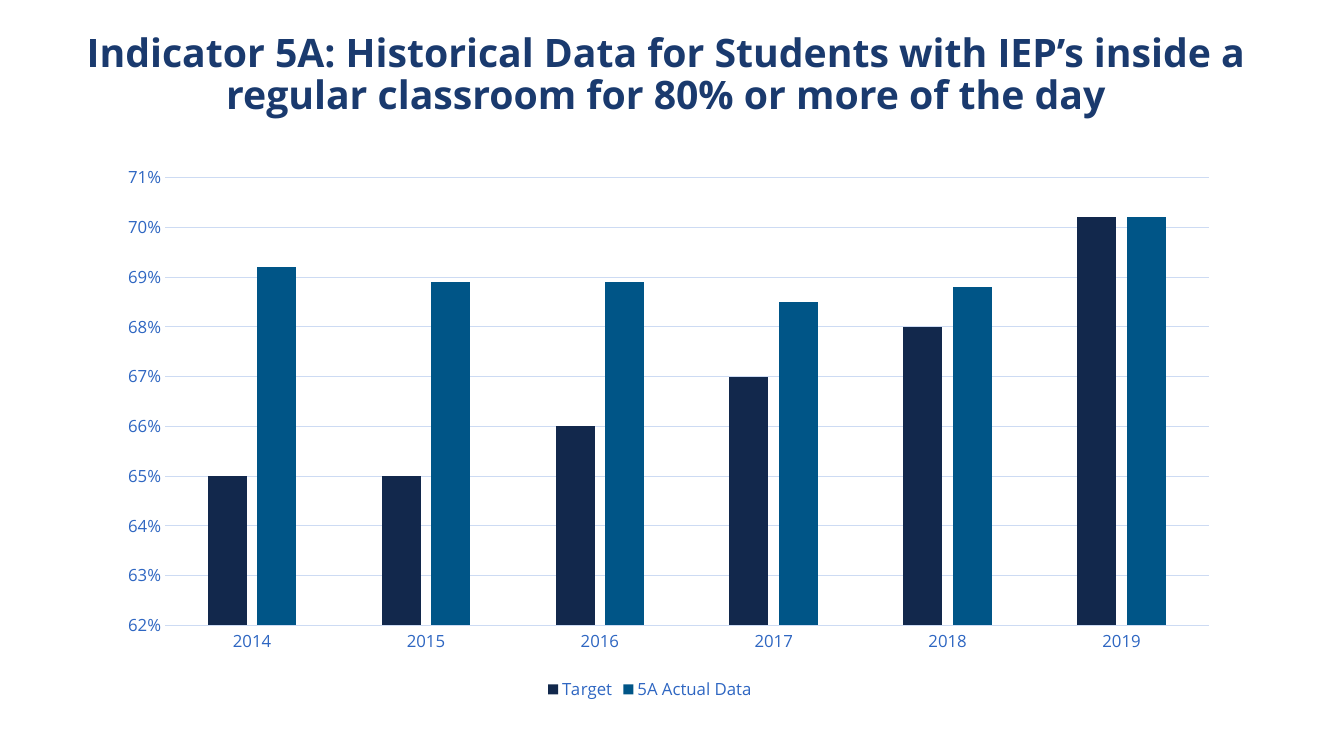
"""Build a slide comparing yearly targets with actual classroom data."""
from dataclasses import dataclass
from typing import Any

import pptx
import pptx.chart.data
import pptx.dml.color
import pptx.enum.chart
import pptx.enum.text
import pptx.oxml
import pptx.oxml.ns
import pptx.util

Pt = pptx.util.Pt
RGB = pptx.dml.color.RGBColor
TITLE = RGB(0x1A, 0x3A, 0x6E)
NAVY = RGB(0x12, 0x28, 0x4C)
TEAL = RGB(0x00, 0x55, 0x87)
LABEL = RGB(0x2E, 0x66, 0xC2)
GRID = RGB(0xCD, 0xDB, 0xF3)
FACE = "Open Sans"
YEARS = [str(year) for year in range(2014, 2020)]
PLOT = {"x": 0.086, "y": 0.118, "w": 0.891, "h": 0.749}


@dataclass(frozen=True)
class Series:
    name: str
    rates: tuple[float, ...]
    color: RGB


SERIES = (
    Series("Target", (65, 65, 66, 67, 68, 70.2), NAVY),
    Series("5A Actual Data", (69.2, 68.9, 68.9, 68.5, 68.8, 70.2), TEAL),
)


def assign(item: Any, values: dict[str, Any]) -> None:
    for name, value in values.items():
        setattr(item, name, value)


def style(font: Any, size: float, color: RGB, bold: bool = False) -> None:
    assign(font, {"name": FACE, "size": Pt(size), "bold": bold})
    font.color.rgb = color


def rule(line: Any) -> None:
    line.width = Pt(0.75)
    line.color.rgb = GRID


def place(chart: Any) -> None:
    space = pptx.oxml.ns.nsdecls("c")
    modes = '<c:layoutTarget val="inner"/><c:xMode val="edge"/><c:yMode val="edge"/>'
    sizes = "".join(f'<c:{key} val="{value}"/>' for key, value in PLOT.items())
    layout = pptx.oxml.parse_xml(
        f"<c:layout {space}><c:manualLayout>{modes}{sizes}</c:manualLayout></c:layout>"
    )
    area = chart.element.find(".//" + pptx.oxml.ns.qn("c:plotArea"))
    for old in area.findall(pptx.oxml.ns.qn("c:layout")):
        area.remove(old)
    area.insert(0, layout)


def add_title(slide: Any) -> None:
    title = slide.shapes.title
    assign(title, {"left": Pt(13), "top": Pt(16.5), "width": Pt(925), "height": Pt(75)})
    frame = title.text_frame
    frame.text = (
        "Indicator 5A: Historical Data for Students with IEP’s inside a "
        "regular classroom for 80% or more of the day"
    )
    assign(frame, {
        "word_wrap": True,
        "auto_size": pptx.enum.text.MSO_AUTO_SIZE.SHAPE_TO_FIT_TEXT,
        "vertical_anchor": pptx.enum.text.MSO_ANCHOR.MIDDLE,
    })
    text = frame.paragraphs[0]
    assign(text, {"alignment": pptx.enum.text.PP_ALIGN.CENTER, "line_spacing": 0.9})
    style(text.runs[0].font, 28, TITLE, True)


def add_chart(slide: Any) -> None:
    data = pptx.chart.data.CategoryChartData(number_format="0%")
    data.categories = YEARS
    for item in SERIES:
        data.add_series(item.name, [round(rate / 100, 3) for rate in item.rates])
    chart = slide.shapes.add_chart(
        pptx.enum.chart.XL_CHART_TYPE.COLUMN_CLUSTERED,
        Pt(46), Pt(76.5), Pt(836.5), Pt(427), data,
    ).chart
    assign(chart, {"has_title": False, "has_legend": True})
    style(chart.font, 10, NAVY)
    place(chart)

    plot = chart.plots[0]
    assign(plot, {"gap_width": 219, "overlap": -27, "vary_by_categories": False})
    for item, bars in zip(SERIES, plot.series):
        bars.format.fill.solid()
        bars.format.fill.fore_color.rgb = item.color
        bars.invert_if_negative = False

    none = pptx.enum.chart.XL_TICK_MARK.NONE
    rates = chart.value_axis
    for axis in (chart.category_axis, rates):
        assign(axis, {"major_tick_mark": none, "minor_tick_mark": none})
        style(axis.tick_labels.font, 12, LABEL)
    rule(chart.category_axis.format.line)
    assign(rates, {
        "minimum_scale": 0.62, "maximum_scale": 0.71,
        "major_unit": 0.01, "has_major_gridlines": True,
    })
    assign(rates.tick_labels, {"number_format": "0%", "number_format_is_linked": False})
    rates.format.line.fill.background()
    rule(rates.major_gridlines.format.line)

    assign(chart.legend, {
        "position": pptx.enum.chart.XL_LEGEND_POSITION.BOTTOM,
        "include_in_layout": False,
    })
    style(chart.legend.font, 12, LABEL)


def main() -> None:
    deck = pptx.Presentation()
    assign(deck, {"slide_width": Pt(960), "slide_height": Pt(540)})
    slide = deck.slides.add_slide(deck.slide_layouts.get_by_name("Title Only"))
    add_title(slide)
    add_chart(slide)
    deck.save("out.pptx")


if __name__ == "__main__":
    main()
